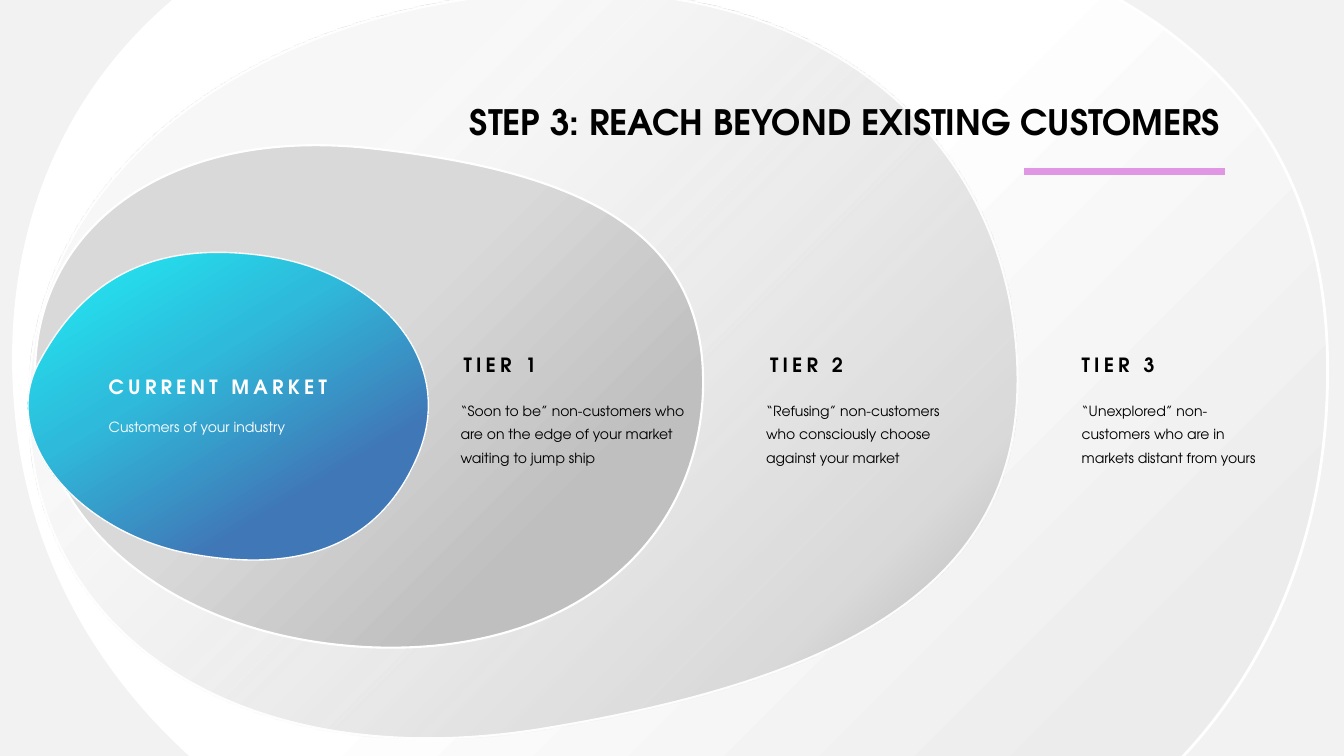
from dataclasses import dataclass
from math import cos, radians, sin
from typing import NamedTuple

from lxml.etree import SubElement
from pptx import Presentation
from pptx.dml.color import RGBColor
from pptx.enum.shapes import MSO_CONNECTOR
from pptx.enum.text import MSO_ANCHOR, MSO_AUTO_SIZE, PP_ALIGN
from pptx.oxml.ns import qn
from pptx.slide import Slide
from pptx.text.text import TextFrame
from pptx.util import Emu, Inches, Length, Pt

# Grid: square cells, 13.33 columns by 7.5 rows
COLUMNS, ROWS = 13.33, 7.5
CELL = Inches(1)


@dataclass(frozen=True)
class Theme:
    font: str = "TeX Gyre Adventor"
    backdrop: str = "F2F2F2"
    ink: str = "000000"
    white: str = "FFFFFF"
    accent: str = "E096E3"
    title_size: float = 25
    heading_size: float = 14
    body_size: float = 10
    heading_tracking: float = 3
    body_leading: float = 17
    gradient_angle: float = 45


THEME = Theme()
Point = tuple[float, float]
Box = tuple[float, float, float, float]


class Stop(NamedTuple):
    position: int
    color: str
    opacity: int = 100


class Curve(NamedTuple):
    leave: Point
    arrive: Point
    end: Point


@dataclass(frozen=True)
class Market:
    box: Box
    curves: tuple[Curve, ...]  # a closed loop, as seen after rotation
    stops: tuple[Stop, ...]
    outline: float
    outline_opacity: int = 100
    rotation: float = 0


class Label(NamedTuple):
    heading: str
    description: str
    heading_box: Box
    description_box: Box
    color: str = THEME.ink
    wrap: bool = True


# Nested markets, from the outermost to the innermost
MARKETS = (
    Market((0.13, -1.28, 13.04, 10.59), (
        Curve((13.01, 7.14), (10.57, 9.5), (6.63, 9.3)),
        Curve((3.04, 9.12), (0.42, 6.98), (0.16, 4.09)),
        Curve((-0.16, 0.69), (2.55, -1.7), (6.69, -1.22)),
        Curve((10.84, -0.73), (13.33, 0.56), (13.16, 4)),
    ), (Stop(47, "FFFFFF"), Stop(83, "ECECEC")), 2),
    Market((0.28, -0.09, 9.81, 7.41), (
        Curve((9.85, 1.18), (7.94, -0.35), (4.97, -0.05)),
        Curve((2.29, 0.23), (0.39, 1.82), (0.29, 3.83)),
        Curve((0.17, 6.2), (2.29, 7.73), (5.38, 7.23)),
        Curve((8.49, 6.72), (10.32, 5.72), (10.07, 3.35)),
    ), (Stop(29, "F2F2F2", 51), Stop(82, "D9D9D9"), Stop(100, "A6A6A6")),
        1.5, outline_opacity=92),
    Market((0.35, 1.44, 6.62, 4.98), (
        Curve((6.89, 5.41), (5.66, 6.51), (3.65, 6.42)),
        Curve((1.83, 6.33), (0.5, 5.32), (0.36, 3.96)),
        Curve((0.2, 2.36), (1.57, 1.24), (3.67, 1.47)),
        Curve((5.78, 1.7), (7.05, 2.31), (6.97, 3.93)),
    ), (Stop(45, "D9D9D9"), Stop(77, "BFBFBF")), 1.5),
    Market((0.31, 2.49, 3.92, 3.06), (
        Curve((0.85, 2.75), (1.54, 2.38), (2.64, 2.54)),
        Curve((3.74, 2.7), (4.52, 3.55), (4.16, 4.48)),
        Curve((3.79, 5.41), (2.99, 5.69), (1.92, 5.5)),
        Curve((0.84, 5.32), (-0.06, 4.38), (0.4, 3.57)),
    ), (Stop(0, "1BFDFE"), Stop(40, "2EBBDB"), Stop(70, "4078B7")),
        1, rotation=13.7),
)

LABELS = (
    Label("CURRENT MARKET", "Customers of your industry",
          (0.98, 3.67, 2.42, 0.34), (0.98, 4.1, 1.97, 0.27), THEME.white, wrap=False),
    Label("TIER 1", "“Soon to be” non-customers who are on the edge of your market waiting to jump ship",
          (4.5, 3.45, 0.97, 0.34), (4.47, 3.87, 2.42, 0.75)),
    Label("TIER 2", "“Refusing” non-customers who consciously choose against your market",
          (7.54, 3.45, 0.97, 0.34), (7.5, 3.87, 2.06, 0.75)),
    Label("TIER 3", "“Unexplored” non-customers who are in markets distant from yours",
          (10.63, 3.45, 0.97, 0.34), (10.63, 3.87, 2.02, 0.75)),
)


def cells(count: float) -> Emu:
    return Emu(round(count * CELL))


def add_opacity(color_element, percent: int) -> None:
    if percent < 100:
        SubElement(color_element, qn("a:alpha"), val=str(percent * 1000))


def add_point(segment, point: Point, market: Market) -> None:
    """Add a point, turned back to the unrotated box and measured from its corner."""
    left, top, width, height = market.box
    dx, dy = point[0] - left - width / 2, point[1] - top - height / 2
    turn = radians(market.rotation)
    x = width / 2 + dx * cos(turn) + dy * sin(turn)
    y = height / 2 - dx * sin(turn) + dy * cos(turn)
    SubElement(segment, qn("a:pt"), x=str(cells(x)), y=str(cells(y)))


def set_curves(outline, market: Market) -> None:
    for segment in list(outline):
        outline.remove(segment)
    add_point(SubElement(outline, qn("a:moveTo")), market.curves[-1].end, market)
    for curve in market.curves:
        segment = SubElement(outline, qn("a:cubicBezTo"))
        for point in curve:
            add_point(segment, point, market)
    SubElement(outline, qn("a:close"))


def set_gradient(shape, stops: tuple[Stop, ...]) -> None:
    shape.fill.gradient()
    gradient = shape.element.spPr.find(qn("a:gradFill"))
    stop_list = gradient.find(qn("a:gsLst"))
    for sample in list(stop_list):
        stop_list.remove(sample)
    for stop in stops:
        entry = SubElement(stop_list, qn("a:gs"), pos=str(stop.position * 1000))
        add_opacity(SubElement(entry, qn("a:srgbClr"), val=stop.color), stop.opacity)
    gradient.find(qn("a:lin")).set("ang", str(round(THEME.gradient_angle * 60000)))


def draw_market(slide: Slide, market: Market) -> None:
    left, top, width, height = market.box
    builder = slide.shapes.build_freeform(cells(left), cells(top))
    builder.add_line_segments([(cells(left + width), cells(top + height))])
    blob = builder.convert_to_shape()
    set_curves(next(blob.element.spPr.iter(qn("a:path"))), market)
    blob.shadow.inherit = False
    blob.rotation = market.rotation
    set_gradient(blob, market.stops)
    blob.line.width = Pt(market.outline)
    blob.line.color.rgb = RGBColor.from_string(THEME.white)
    add_opacity(next(blob.element.spPr.find(qn("a:ln")).iter(qn("a:srgbClr"))),
                market.outline_opacity)


def write(frame: TextFrame, text: str, *, size: float, color: str = THEME.ink,
          bold: bool = False, tracking: float = 0, wrap: bool = True,
          leading: float | Length | None = None,
          align: PP_ALIGN = PP_ALIGN.LEFT) -> None:
    frame.word_wrap = wrap
    frame.auto_size = MSO_AUTO_SIZE.SHAPE_TO_FIT_TEXT
    frame.vertical_anchor = MSO_ANCHOR.TOP
    paragraph = frame.paragraphs[0]
    paragraph.alignment, paragraph.line_spacing = align, leading
    run = paragraph.add_run()
    run.text = text
    run.font.name, run.font.size, run.font.bold = THEME.font, Pt(size), bold
    run.font.color.rgb = RGBColor.from_string(color)
    if tracking:
        run.font._element.set("spc", str(round(tracking * 100)))


def draw_label(slide: Slide, label: Label) -> None:
    heading = slide.shapes.add_textbox(*map(cells, label.heading_box))
    write(heading.text_frame, label.heading, size=THEME.heading_size, color=label.color,
          bold=True, tracking=THEME.heading_tracking, wrap=False)
    description = slide.shapes.add_textbox(*map(cells, label.description_box))
    write(description.text_frame, label.description, size=THEME.body_size,
          color=label.color, wrap=label.wrap,
          leading=Pt(THEME.body_leading) if label.wrap else None)


def draw_title(slide: Slide) -> None:
    title = slide.shapes.title
    title.left, title.top, title.width, title.height = map(cells, (4.15, 0.74, 8.05, 0.65))
    write(title.text_frame, "STEP 3: REACH BEYOND EXISTING CUSTOMERS",
          size=THEME.title_size, bold=True, leading=1.5, align=PP_ALIGN.RIGHT)
    # Bring the title in front of the markets
    title.element.getparent().append(title.element)

    underline = slide.shapes.add_connector(
        MSO_CONNECTOR.STRAIGHT, *map(cells, (12.12, 1.7, 10.19, 1.7)))
    underline.line.width = Pt(5)
    underline.line.color.rgb = RGBColor.from_string(THEME.accent)
    underline.element.spPr.find(qn("a:ln")).set("cap", "sq")
    SubElement(underline.element.spPr, qn("a:effectLst"))


def main() -> None:
    deck = Presentation()
    deck.slide_width, deck.slide_height = cells(COLUMNS), cells(ROWS)
    slide = deck.slides.add_slide(deck.slide_layouts.get_by_name("Title Only"))
    slide.background.fill.solid()
    slide.background.fill.fore_color.rgb = RGBColor.from_string(THEME.backdrop)
    for market in MARKETS:
        draw_market(slide, market)
    for label in LABELS:
        draw_label(slide, label)
    draw_title(slide)
    deck.save("out.pptx")


if __name__ == "__main__":
    main()
